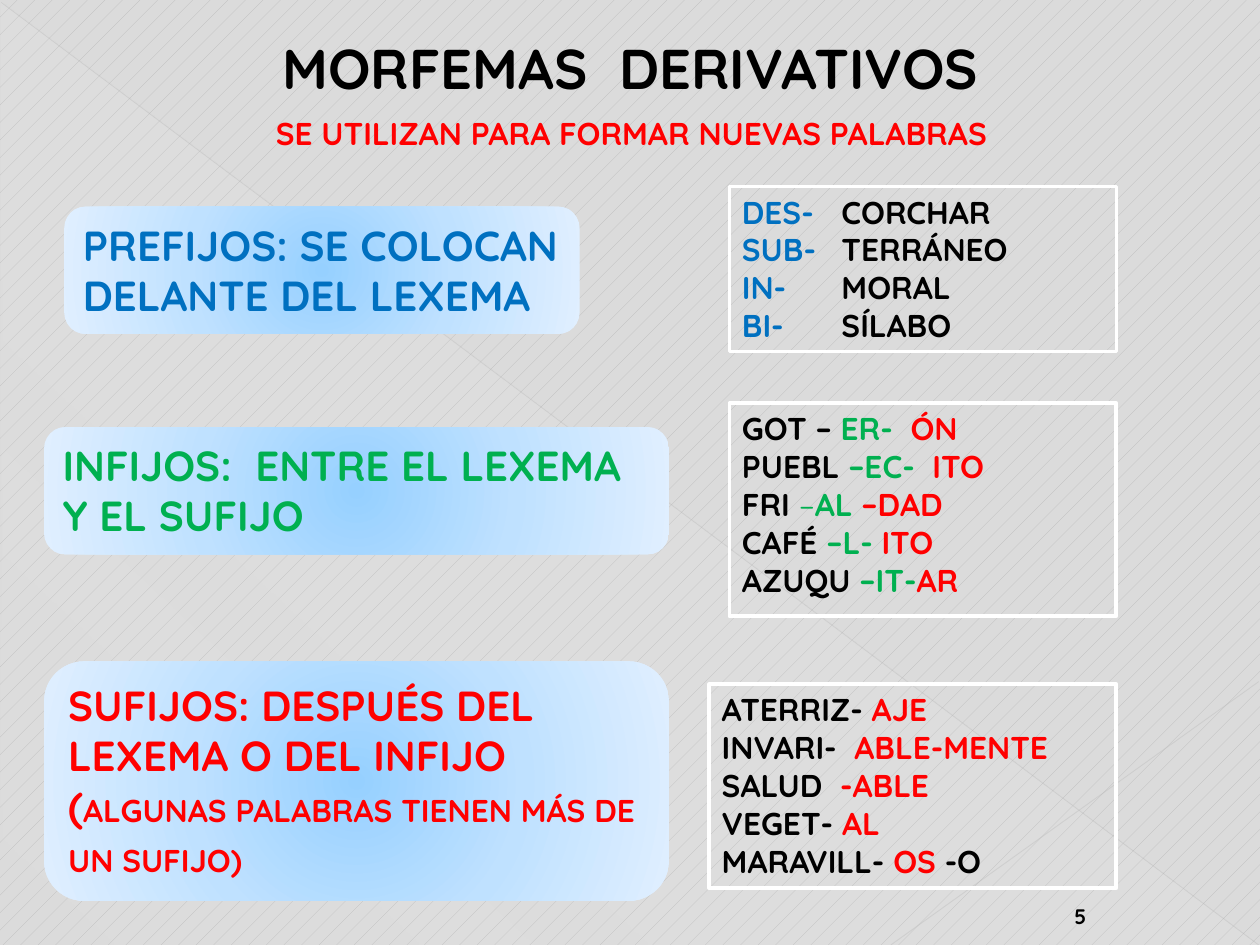
from collections import namedtuple

from lxml import etree
from pptx import Presentation
from pptx.dml.color import RGBColor
from pptx.enum.dml import MSO_PATTERN as Pattern
from pptx.enum.shapes import MSO_CONNECTOR as Connector, MSO_SHAPE as Shape
from pptx.enum.text import MSO_ANCHOR as Anchor, PP_ALIGN as Align
from pptx.oxml import parse_xml
from pptx.oxml.ns import nsdecls, qn
from pptx.util import Inches, Pt

Box = namedtuple("Box", "left top width height")
CELL = Inches(0.1)  # the slide is a grid of 100 columns by 75 rows
FONT = "Quicksand"
BLACK, RED, GREEN, BLUE, WHITE = "000000", "FF0000", "00B050", "0070C0", "FFFFFF"
GLOW = [(0, "96D0FF", 100), (50, "BFE1FF", 100), (100, "E0EFFF", 100)]
SHEEN = [(0, "F8F8F8", 10), (70, "F8F8F8", 8), (100, "F8F8F8", 1)]
GLOW_PATH = '<a:path path="circle"><a:fillToRect l="50000" t="50000" r="50000" b="50000"/></a:path>'
SHEEN_ANGLE = f'<a:lin ang="{133 * 60000}" scaled="0"/>'

PREFIXES = [
    [("DES-\t", BLUE), ("CORCHAR", BLACK)],
    [("SUB-\t", BLUE), ("TERRÁNEO", BLACK)],
    [("IN-\t", BLUE), ("MORAL", BLACK)],
    [("BI-\t", BLUE), ("SÍLABO", BLACK)],
]
INFIXES = [
    [("GOT – ", BLACK), ("ER-  ", GREEN), ("ÓN", RED)],
    [("PUEBL ", BLACK), ("–EC-  ", GREEN), ("ITO", RED)],
    [("FRI ", BLACK), ("–", GREEN, {"bold": False}), ("AL ", GREEN), ("–DAD", RED)],
    [("CAFÉ ", BLACK), ("–L- ", GREEN), ("ITO", RED)],
    [("AZUQU ", BLACK), ("–IT-", GREEN), ("AR", RED)],
]
SUFFIXES = [
    [("ATERRIZ- ", BLACK), ("AJE", RED)],
    [("INVARI-  ", BLACK), ("ABLE-MENTE", RED)],
    [("SALUD  ", BLACK), ("-ABLE", RED)],
    [("VEGET- ", BLACK), ("AL", RED)],
    [("MARAVILL- ", BLACK), ("OS ", RED), ("-O", BLACK)],
]
SMALL = {"size": Pt(18)}
SECTIONS = [
    (Box(5.1, 16.4, 40.9, 10.1), [[("PREFIJOS: SE COLOCAN DELANTE DEL LEXEMA", BLUE)]],
     Box(57.9, 14.8, 30.7, 13.1), PREFIXES, 1.5),
    (Box(3.5, 33.9, 49.6, 10.1), [[("INFIJOS:  ENTRE EL LEXEMA Y EL SUFIJO", GREEN)]],
     Box(57.9, 32, 30.7, 16.9), INFIXES, 2.25),
    (Box(3.5, 52.5, 49.6, 19), [[("SUFIJOS: DESPUÉS DEL LEXEMA O DEL INFIJO", RED)],
                               [("(", RED), ("ALGUNAS PALABRAS TIENEN MÁS DE UN SUFIJO)", RED, SMALL),
                                (" ", RED)]],
     Box(56.3, 54.3, 32.3, 16.2), SUFFIXES, 2.25),
]


def color(value):
    return RGBColor.from_string(value)


def place(box):
    return [round(side * CELL) for side in box]


def write(shape, lines, size, align=Align.LEFT, anchor=Anchor.TOP):
    frame = shape.text_frame
    frame.word_wrap = True
    frame.vertical_anchor = anchor
    for index, line in enumerate(lines):
        para = frame.add_paragraph() if index else frame.paragraphs[0]
        para.alignment = align
        for text, ink, *changes in line:
            span = para.add_run()
            span.text = text
            span.font.color.rgb = color(ink)
            style = {"name": FONT, "size": Pt(size), "bold": True}
            for change in changes:
                style.update(change)
            for name, value in style.items():
                setattr(span.font, name, value)
    return frame


def add_text(page, box, text, size, ink, **layout):
    write(page.shapes.add_textbox(*place(box)), [[(text, ink)]], size, **layout)


def add_panel(page, kind, box):
    panel = page.shapes.add_shape(kind, *place(box))
    panel.shadow.inherit = False
    panel.fill.background()
    panel.line.fill.background()
    return panel


def fill_gradient(panel, stops, direction):
    marks = "".join(
        f'<a:gs pos="{share * 1000}"><a:srgbClr val="{tone}">'
        f'<a:alpha val="{alpha * 1000}"/></a:srgbClr></a:gs>'
        for share, tone, alpha in stops)
    gradient = parse_xml(f'<a:gradFill {nsdecls("a")} rotWithShape="1">'
                         f'<a:gsLst>{marks}</a:gsLst>{direction}</a:gradFill>')
    props = panel.fill._xPr
    props.replace(props.find(qn("a:noFill")), gradient)


def add_ray(page, start, end, tone, width, alpha):
    ray = page.shapes.add_connector(Connector.STRAIGHT, *place(start + end))
    ray.line.width = Pt(width)
    ray.line.color.rgb = color(tone)
    props = ray._element.spPr
    etree.SubElement(props, qn("a:effectLst"))
    tint = props.find(".//" + qn("a:srgbClr"))
    etree.SubElement(tint, qn("a:alpha")).set("val", str(alpha * 1000))


def add_backdrop(page, box):
    fill = page.background.fill
    fill.patterned()
    fill.pattern = Pattern.PERCENT_5
    fill.fore_color.rgb = color("BABABA")
    fill.back_color.rgb = color("DBDBDB")
    fill_gradient(add_panel(page, Shape.RIGHT_TRIANGLE, box), SHEEN, SHEEN_ANGLE)
    right, bottom = box.left + box.width, box.top + box.height
    add_ray(page, (box.left, box.top), (right, bottom), "B4B4B4", 0.39, 35)
    add_ray(page, (right, 54.1), (70.7, bottom), "BDBDBD", 0.47, 45)


def add_heading(page, box):
    title_rows = 6.4
    add_text(page, box._replace(width=58.3, height=title_rows),
             "MORFEMAS  DERIVATIVOS", 32, BLACK, align=Align.CENTER)
    add_text(page, box._replace(top=box.top + title_rows, height=box.height - title_rows),
             "SE UTILIZAN PARA FORMAR NUEVAS PALABRAS", 18, RED)


def add_definition(page, box, lines):
    panel = add_panel(page, Shape.ROUNDED_RECTANGLE, box)
    fill_gradient(panel, GLOW, GLOW_PATH)
    write(panel, lines, 24)


def add_examples(page, box, lines, border):
    panel = add_panel(page, Shape.RECTANGLE, box)
    panel.line.color.rgb = color(WHITE)
    panel.line.width = Pt(border)
    frame = write(panel, lines, 18)
    for para in frame.paragraphs:
        if any("\t" in span.text for span in para.runs):
            stops = etree.SubElement(para._p.get_or_add_pPr(), qn("a:tabLst"))
            etree.SubElement(stops, qn("a:tab"), pos=str(Inches(0.79)), algn="l")


def main():
    deck = Presentation()
    deck.slide_width, deck.slide_height = 100 * CELL, 75 * CELL
    page = deck.slides.add_slide(deck.slide_layouts[6])
    add_backdrop(page, Box(0.1, 0.2, 99.8, 74.8))
    add_heading(page, Box(20.9, 2.2, 59.8, 10.4))
    for definition_box, definition, example_box, examples, border in SECTIONS:
        add_definition(page, definition_box, definition)
        add_examples(page, example_box, examples, border)
    add_text(page, Box(83, 70.9, 5.5, 3.3), "5", 12, BLACK,
             align=Align.CENTER, anchor=Anchor.BOTTOM)
    deck.save("out.pptx")


if __name__ == "__main__":
    main()
